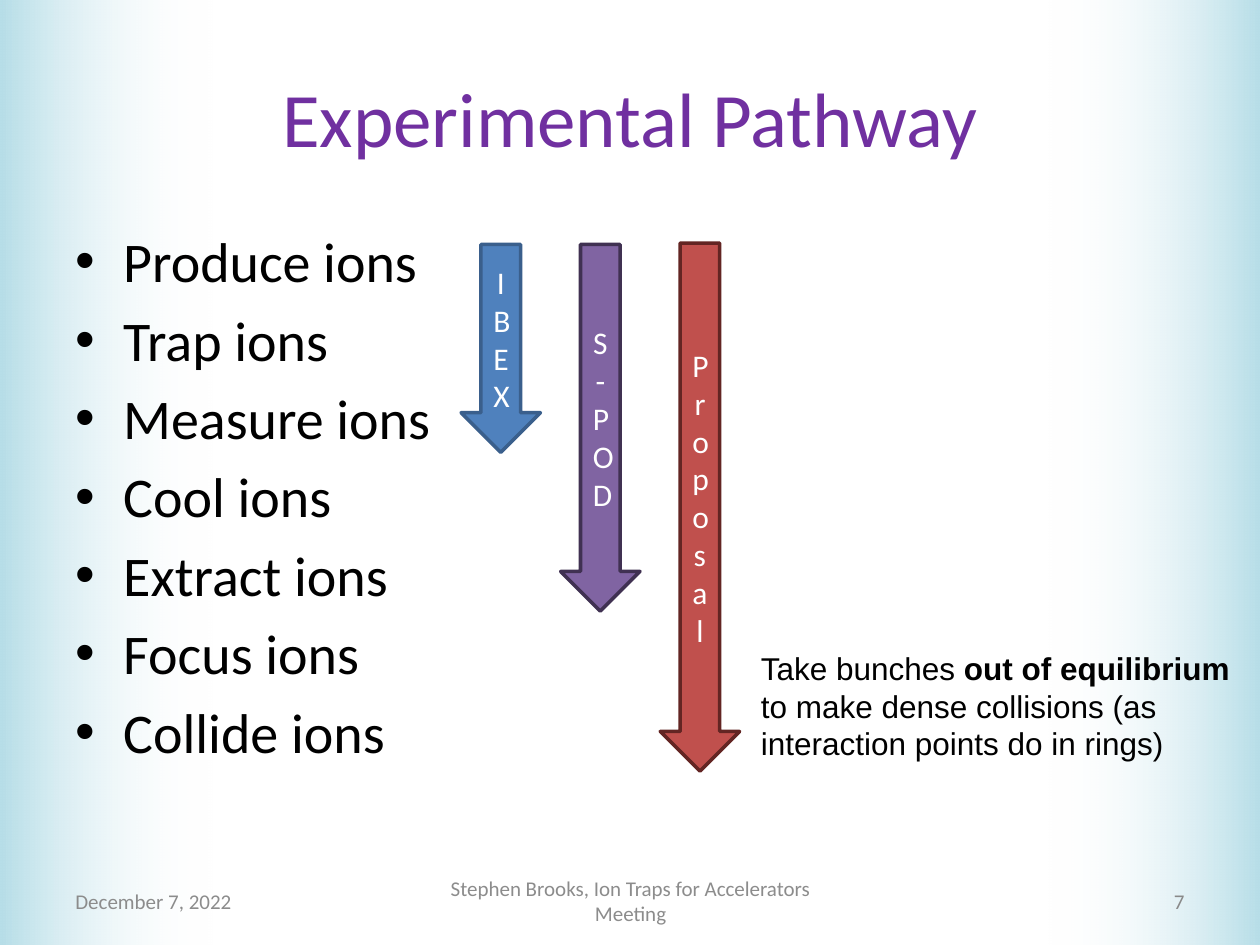
"""Build the Experimental Pathway slide."""
from lxml import etree
from pptx import Presentation
from pptx.dml.color import RGBColor
from pptx.enum import shapes, text
from pptx.oxml import ns
from pptx.util import Inches, Pt

TEAL = RGBColor(0xB7, 0xDE, 0xE8)
WHITE = RGBColor(0xFF, 0xFF, 0xFF)
BLACK = RGBColor(0, 0, 0)
PURPLE = RGBColor(0x70, 0x30, 0xA0)
GREY = RGBColor(0x8C, 0x8C, 0x8C)
PAGE_GREY = RGBColor(0x89, 0x89, 0x89)
BLUE, BLUE_EDGE = RGBColor(0x4F, 0x81, 0xBD), RGBColor(0x3A, 0x5F, 0x8C)
VIOLET, VIOLET_EDGE = RGBColor(0x80, 0x64, 0xA2), RGBColor(0x40, 0x31, 0x52)
RED, RED_EDGE = RGBColor(0xC0, 0x50, 0x4D), RGBColor(0x63, 0x25, 0x23)

LEFT, CENTER, RIGHT = text.PP_ALIGN.LEFT, text.PP_ALIGN.CENTER, text.PP_ALIGN.RIGHT
MIDDLE, TOP = text.MSO_ANCHOR.MIDDLE, text.MSO_ANCHOR.TOP


def add_run(paragraph, words, size, color, face="Calibri", bold=False):
    run = paragraph.add_run()
    run.text = words
    for key, value in {"size": Pt(size), "name": face, "bold": bold}.items():
        setattr(run.font, key, value)
    run.font.color.rgb = color


def add_frame(box, anchor=MIDDLE, align=LEFT):
    frame = box.text_frame
    frame.word_wrap = True
    frame.vertical_anchor = anchor
    frame.paragraphs[0].alignment = align
    return frame


deck = Presentation()
deck.slide_width, deck.slide_height = Inches(10), Inches(7.5)
slide = deck.slides.add_slide(deck.slide_layouts[6])
canvas = slide.shapes

for left, rotation in ((8.31, 180), (0, 0)):
    edge = canvas.add_shape(shapes.MSO_SHAPE.RECTANGLE, Inches(left), 0, Inches(1.69), Inches(7.5))
    edge.rotation = rotation
    edge.shadow.inherit = False
    edge.line.fill.background()
    edge.fill.gradient()
    edge.fill.gradient_angle = 0
    for stop, color, position in zip(edge.fill.gradient_stops, (TEAL, WHITE), (0, 1)):
        stop.color.rgb = color
        stop.position = position
    clear_color = edge.fill._fill._gradFill.findall(".//" + ns.qn("a:srgbClr"))[1]
    etree.SubElement(clear_color, ns.qn("a:alpha"), val="0")

for words, left, top, width, height, align, size, color in (
    ("Experimental Pathway", 0.5, 0.3, 9, 1.25, CENTER, 44, PURPLE),
    ("December 7, 2022", 0.5, 6.95, 2.33, 0.4, LEFT, 12, GREY),
    ("Stephen Brooks, Ion Traps for Accelerators Meeting", 3.42, 6.95, 3.17, 0.4, CENTER, 12, GREY),
    ("7", 7.17, 6.95, 2.33, 0.4, RIGHT, 12, PAGE_GREY),
):
    label = canvas.add_textbox(Inches(left), Inches(top), Inches(width), Inches(height))
    add_run(add_frame(label, align=align).paragraphs[0], words, size, color)

steps = add_frame(canvas.add_textbox(Inches(0.5), Inches(1.75), Inches(9), Inches(4.95)), TOP)
for index, verb in enumerate(("Produce", "Trap", "Measure", "Cool", "Extract", "Focus", "Collide")):
    step = steps.add_paragraph() if index else steps.paragraphs[0]
    step.space_before = Pt(6.4)
    add_run(step, f"{verb} ions", 32, BLACK)
    properties = step._p.get_or_add_pPr()
    properties.set("marL", str(Inches(0.38)))
    properties.set("indent", str(Inches(-0.38)))
    etree.SubElement(properties, ns.qn("a:buFont"), typeface="Arial")
    etree.SubElement(properties, ns.qn("a:buChar"), char="•")

for index, (project, top, height, color, outline) in enumerate((
    ("IBEX", 1.94, 1.65, BLUE, BLUE_EDGE),
    ("S-POD", 1.94, 2.91, VIOLET, VIOLET_EDGE),
    ("Proposal", 1.93, 4.19, RED, RED_EDGE),
)):
    reach = canvas.add_shape(shapes.MSO_SHAPE.DOWN_ARROW, Inches(3.66 + 0.79 * index), Inches(top),
                             Inches(0.63), Inches(height))
    reach.shadow.inherit = False
    reach.fill.solid()
    reach.fill.fore_color.rgb = color
    reach.line.color.rgb = outline
    reach.line.width = Pt(2)
    add_run(add_frame(reach, align=CENTER).paragraphs[0], project, 18, WHITE)

remark = add_frame(canvas.add_textbox(Inches(5.94), Inches(5.1), Inches(4.19), Inches(1.01)), TOP)
remark.auto_size = text.MSO_AUTO_SIZE.SHAPE_TO_FIT_TEXT
for words, bold in (
    ("Take bunches ", False),
    ("out of equilibrium", True),
    (" to make dense collisions (as interaction points do in rings)", False),
):
    add_run(remark.paragraphs[0], words, 18, BLACK, "Arial", bold)

deck.save("out.pptx")
